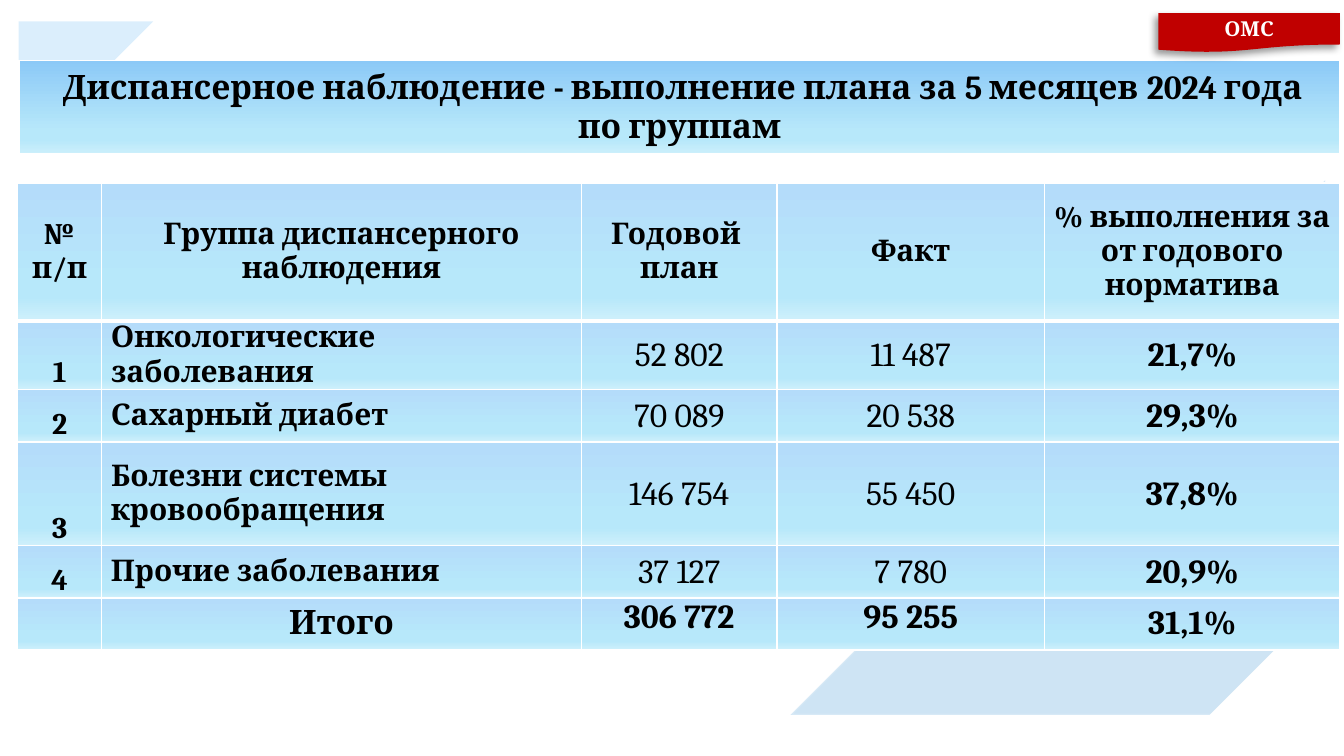
"""Build a slide on follow-up care plan results by disease group."""
from lxml.etree import SubElement
from pptx import Presentation
from pptx.dml.color import RGBColor
from pptx.enum.shapes import MSO_SHAPE
from pptx.enum.text import MSO_ANCHOR, PP_ALIGN
from pptx.oxml.ns import qn
from pptx.util import Pt

TRI, FLAG = MSO_SHAPE.RIGHT_TRIANGLE, MSO_SHAPE.FLOWCHART_DOCUMENT
TOP, MID, LOW = MSO_ANCHOR.TOP, MSO_ANCHOR.MIDDLE, MSO_ANCHOR.BOTTOM
LEFT, MIDDLE = PP_ALIGN.LEFT, PP_ALIGN.CENTER

FONT = "Cambria"
COLORS = {
    "ink": "000000", "white": "FFFFFF", "blue": "0D79CA", "sky": "4FADF3",
    "red": "C00000", "title": "8CC9F7", "cell": "B4DCFA",
    "mid": "B7E8FA", "pale": "CFF0FB",
}
TITLE = " Диспансерное наблюдение - выполнение плана за 5 месяцев 2024 года по группам"
ROWS = [
    ["№ п/п", "Группа диспансерного наблюдения", "Годовой \nплан", "Факт",
     "% выполнения за от годового норматива"],
    ["1", "Онкологические заболевания", "52 802", "11 487", "21,7%"],
    ["2", "Сахарный диабет", "70 089", "20 538", "29,3%"],
    ["3", "Болезни системы кровообращения", "146 754", "55 450", "37,8%"],
    ["4", "Прочие заболевания", "37 127", "7 780", "20,9%"],
    ["", "Итого", "306 772", "95 255", "31,1%"],
]
WIDTHS = [45, 257.2, 104.6, 143.4, 158.4]
HEIGHTS = [74, 30.2, 28, 55.6, 28, 28]


def rgb(name):
    return RGBColor.from_string(COLORS[name])


def tint(node, name, alpha=None):
    color = SubElement(node, qn("a:srgbClr"), val=COLORS[name])
    if alpha:
        SubElement(color, qn("a:alpha"), val=str(alpha * 1000))


def write(frame, text, size, bold=True, align=MIDDLE, color="ink"):
    for i, line in enumerate(text.split("\n")):
        para = frame.paragraphs[0] if i == 0 else frame.add_paragraph()
        para.alignment = align
        if line:
            run = para.add_run()
            run.text = line
            font = run.font
            font.name, font.size, font.bold = FONT, Pt(size), bold
            font.color.rgb = rgb(color)


def add_shape(slide, kind, box, fill, line=None, turn=0, alpha=None):
    shape = slide.shapes.add_shape(kind, *map(Pt, box))
    shape.rotation = turn
    shape.shadow.inherit = False
    shape.fill.solid()
    shape.fill.fore_color.rgb = rgb(fill)
    if line:
        shape.line.color.rgb = rgb(line)
        shape.line.width = Pt(1.25)
    else:
        shape.line.fill.background()
    if alpha:
        for color in shape._element.spPr.iter(qn("a:srgbClr")):
            SubElement(color, qn("a:alpha"), val=str(alpha * 1000))
    return shape


def add_badge(slide, text):
    badge = add_shape(slide, FLAG, (620.6, 7, 97.2, 21), "red")
    effects = badge._element.spPr.find(qn("a:effectLst"))
    shade = SubElement(effects, qn("a:outerShdw"), blurRad=str(Pt(4)),
                       dist=str(Pt(3)), dir=str(135 * 60000), rotWithShape="0")
    tint(shade, "ink", 40)
    frame = badge.text_frame
    frame.word_wrap = True
    frame.vertical_anchor = MID
    frame.margin_left = frame.margin_right = Pt(5)
    frame.margin_top = frame.margin_bottom = Pt(2)
    write(frame, text, 11, color="white")


def paint(cell, first, top=1, bottom=1):
    props = cell._tc.get_or_add_tcPr()
    for side, width in (("L", 1), ("R", 1), ("T", top), ("B", bottom)):
        line = SubElement(props, qn(f"a:ln{side}"), w=str(Pt(width)))
        tint(SubElement(line, qn("a:solidFill")), "white")
    grad = SubElement(props, qn("a:gradFill"), rotWithShape="1")
    stops = SubElement(grad, qn("a:gsLst"))
    for pos, name in ((0, first), (74, "mid"), (83, "mid"), (100, "pale")):
        tint(SubElement(stops, qn("a:gs"), pos=str(pos * 1000)), name)
    SubElement(grad, qn("a:lin"), ang=str(90 * 60000), scaled="0")


def add_grid(slide, left, top, widths, heights):
    box = map(Pt, (left, top, sum(widths), sum(heights)))
    table = slide.shapes.add_table(len(heights), len(widths), *box).table
    table.first_row = table.horz_banding = False
    for col, width in zip(table.columns, widths):
        col.width = Pt(width)
    for row, height in zip(table.rows, heights):
        row.height = Pt(height)
    return table


def add_title(slide):
    cell = add_grid(slide, 10.2, 32.4, [707.8], [51]).cell(0, 0)
    cell.vertical_anchor = MID
    paint(cell, "title", bottom=3)
    write(cell.text_frame, TITLE, 18)


def add_results(slide):
    table = add_grid(slide, 9.4, 98, WIDTHS, HEIGHTS)
    last = len(ROWS) - 1
    for r, row in enumerate(ROWS):
        for c, text in enumerate(row):
            cell = table.cell(r, c)
            body = 0 < r < last
            count = c in (2, 3)
            tight = body and c > 1
            cell.margin_left = cell.margin_right = Pt(0.7 if tight else 5)
            cell.margin_top = Pt(0.7 if tight else 0)
            cell.margin_bottom = Pt(0)
            cell.vertical_anchor = (LOW if body and c == 0
                                    else TOP if r == last and count else MID)
            paint(cell, "cell", 3 if r == 1 else 1, 3 if r == 0 else 1)
            write(cell.text_frame, text,
                  16 if r == 0 or body and c < 2 else 18,
                  not (body and count), LEFT if body and c == 1 else MIDDLE)


def main():
    deck = Presentation()
    deck.slide_width, deck.slide_height = Pt(720), Pt(405)
    slide = deck.slides.add_slide(deck.slide_layouts[6])
    add_shape(slide, TRI, (423.4, 96.5, 286.5, 286.5), "blue", "white", 270, 20)
    add_shape(slide, TRI, (638, 322, 72, 72), "white", "white", 270)
    add_shape(slide, TRI, (10, 11.5, 72, 72), "sky", turn=90, alpha=20)
    add_title(slide)
    add_badge(slide, "ОМС")
    add_results(slide)
    deck.save("out.pptx")


if __name__ == "__main__":
    main()
